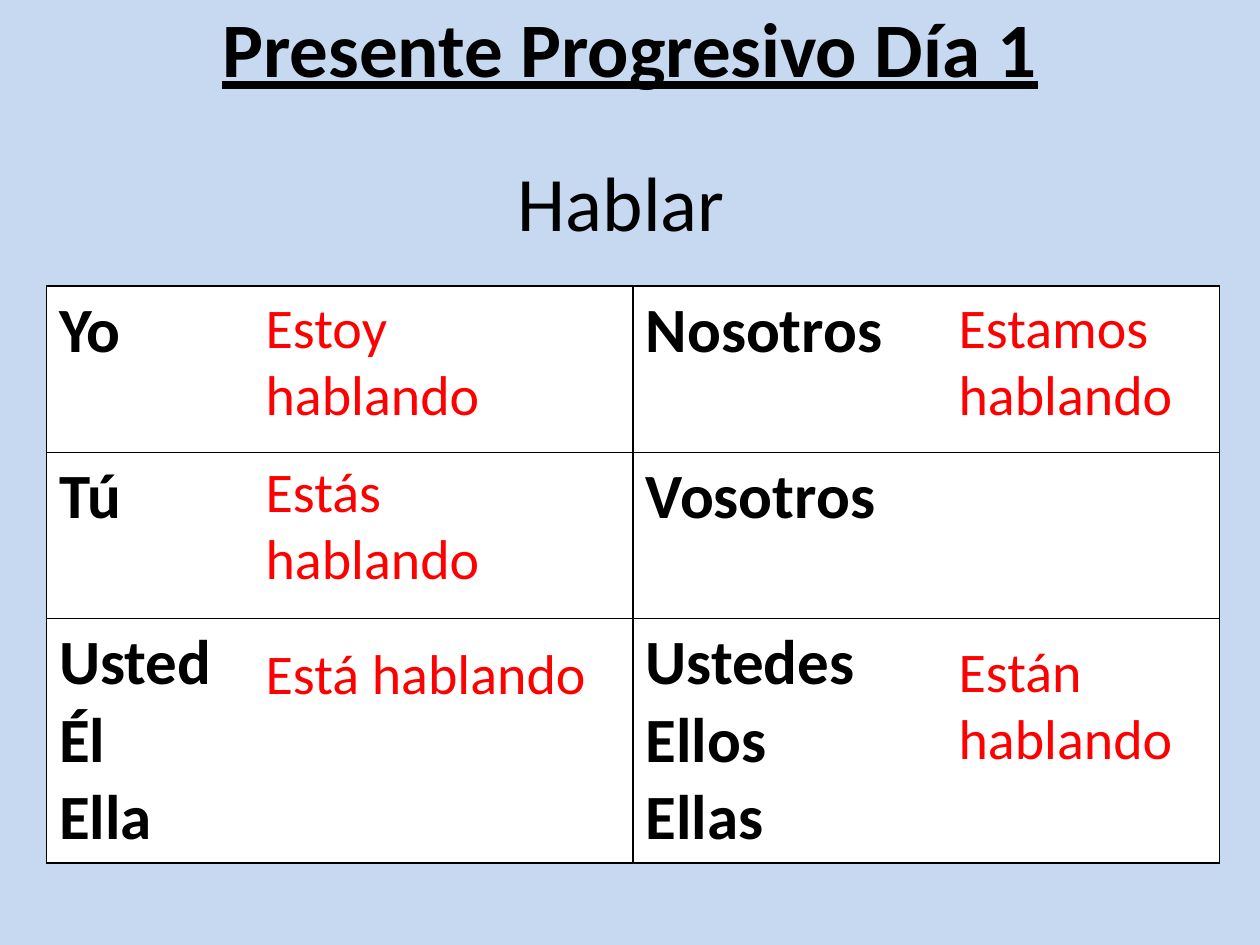
"""Build a Spanish present progressive slide with a conjugation table."""
from lxml.etree import SubElement
from pptx import Presentation
from pptx.dml.color import RGBColor
from pptx.enum.text import MSO_ANCHOR as Anchor, PP_ALIGN as Align
from pptx.oxml.ns import qn
from pptx.util import Inches, Pt

HUES = {"sky": "C6D9F1", "ink": "000000", "red": "FF0000", "white": "FFFFFF"}
WORDS = [
    [["Yo"], ["Nosotros"]],
    [["Tú"], ["Vosotros"]],
    [["Usted", "Él", "Ella"], ["Ustedes", "Ellos", "Ellas"]],
]
ROWS = [1.32, 1.32, 1.94]
FORMS = [
    ("Estoy hablando", 2.01, 2.27, 2.74),
    ("Estás hablando", 2.01, 3.57, 2.74),
    ("Está hablando", 2.01, 5.02, 2.74),
    ("Estamos hablando", 7.51, 2.27, 2.17),
    ("Están hablando", 7.51, 5, 2.17),
]


def color(name):
    return RGBColor.from_string(HUES[name])


def add_run(para, text, size, hue="ink", bold=False, under=False):
    run = para.add_run()
    run.text = text
    font = run.font
    font.name, font.size = "Calibri", Pt(size)
    font.bold, font.underline = bold, under
    font.color.rgb = color(hue)


def add_text(slide, text, left, top, wide, high, size, hue="ink",
             head=False, bold=False):
    box = slide.shapes.add_textbox(
        Inches(left), Inches(top), Inches(wide), Inches(high))
    frame = box.text_frame
    frame.word_wrap = True
    frame.vertical_anchor = Anchor.MIDDLE if head else Anchor.TOP
    para = frame.paragraphs[0]
    para.alignment = Align.CENTER if head else Align.LEFT
    add_run(para, text, size, hue, bold, bold)


def add_edges(cell):
    props = cell._tc.get_or_add_tcPr()
    for i, side in enumerate(("lnL", "lnR", "lnT", "lnB")):
        line = props.makeelement(qn(f"a:{side}"), {"w": str(Pt(1))})
        fill = SubElement(line, qn("a:solidFill"))
        SubElement(fill, qn("a:srgbClr"), val=HUES["ink"])
        props.insert(i, line)


def fill_cell(cell, lines):
    cell.fill.solid()
    cell.fill.fore_color.rgb = color("white")
    add_edges(cell)
    frame = cell.text_frame
    for i, text in enumerate(lines):
        para = frame.add_paragraph() if i else frame.paragraphs[0]
        add_run(para, text, 36, bold=True)


def add_grid(slide):
    table = slide.shapes.add_table(
        len(ROWS), 2, Inches(0.37), Inches(2.27),
        Inches(9.31), Inches(sum(ROWS))).table
    table.first_row = table.horz_banding = False
    for row, high, words in zip(table.rows, ROWS, WORDS):
        row.height = Inches(high)
        for cell, lines in zip(row.cells, words):
            fill_cell(cell, lines)


def main():
    deck = Presentation()
    deck.slide_width, deck.slide_height = Inches(10), Inches(7.5)
    slide = deck.slides.add_slide(deck.slide_layouts[6])
    back = slide.background.fill
    back.solid()
    back.fore_color.rgb = color("sky")
    add_text(slide, "Presente Progresivo Día 1", 0, -0.31, 10, 1.36, 44,
             head=True, bold=True)
    add_grid(slide)
    add_text(slide, "Hablar ", 0, 0.91, 10, 1.36, 44, head=True)
    for text, left, top, wide in FORMS:
        add_text(slide, text, left, top, wide, 1.18, 32, "red")
    deck.save("out.pptx")


if __name__ == "__main__":
    main()
